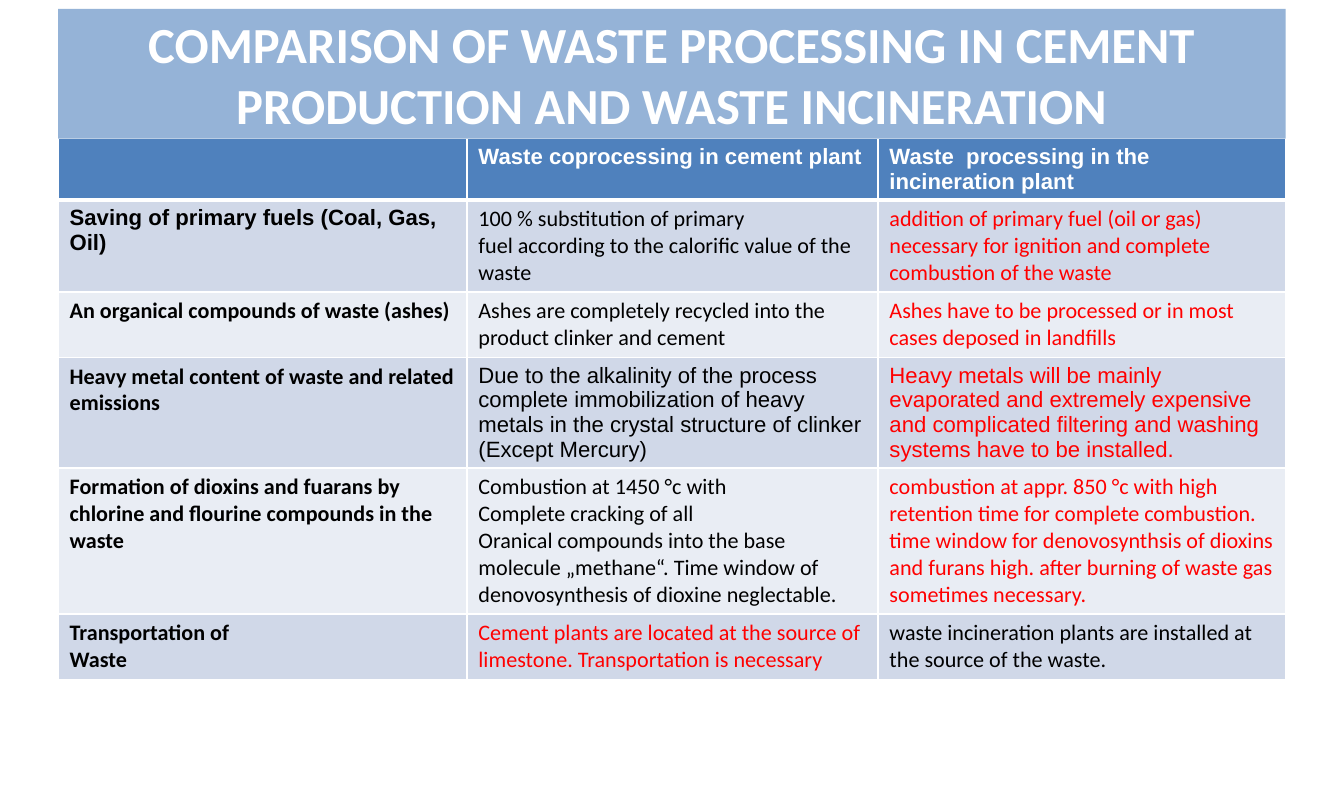
"""Build a slide comparing waste processing in cement and incineration plants."""
from dataclasses import dataclass

from lxml import etree
from pptx import Presentation
from pptx.dml.color import RGBColor
from pptx.enum.shapes import MSO_SHAPE
from pptx.enum.text import MSO_ANCHOR, PP_ALIGN
from pptx.oxml.ns import qn
from pptx.util import Emu, Pt

PX = 9000
RECT = MSO_SHAPE.RECTANGLE
MIDDLE = MSO_ANCHOR.MIDDLE
CENTER = PP_ALIGN.CENTER
COLORS = {
    "white": "FFFFFF", "black": "000000", "red": "FF0000",
    "title": "95B3D7", "header": "4F81BD", "dark": "D0D8E8", "light": "E9EDF4",
}
SLIDE_WIDTH, SLIDE_HEIGHT = 1200, 720
LEFT, TITLE_TOP, TABLE_TOP = 52, 8, 124
COL_WIDTHS = (365, 367, 364)
WIDTH = sum(COL_WIDTHS)
TITLE = "COMPARISON OF WASTE PROCESSING IN CEMENT PRODUCTION AND WASTE INCINERATION"


@dataclass(frozen=True)
class Entry:
    lines: tuple[str, ...] = ()
    color: str = "black"
    font: str = "Calibri"
    bold: bool = False
    size: int = 14


@dataclass(frozen=True)
class Row:
    height: int
    entries: tuple[Entry, Entry, Entry]


def header(*lines: str) -> Entry:
    return Entry(lines, "white", "Arial", True)


def topic(*lines: str, font: str = "Calibri") -> Entry:
    return Entry(lines, font=font, bold=True)


def plus(*lines: str, font: str = "Calibri") -> Entry:
    return Entry(lines, font=font)


def minus(*lines: str, font: str = "Calibri") -> Entry:
    return Entry(lines, "red", font)


ROWS = (
    Row(53, (
        header(),
        header("Waste coprocessing in cement plant"),
        header("Waste  processing in the incineration plant"),
    )),
    Row(82, (
        topic("Saving of primary fuels (Coal, Gas, Oil)", font="Arial"),
        plus("100 % substitution of primary",
             "fuel according to the calorific value of the waste"),
        minus("addition of primary fuel (oil or gas) necessary for ignition "
              "and complete combustion of the waste"),
    )),
    Row(58, (
        topic("An organical compounds of waste (ashes)"),
        plus("Ashes are completely recycled into the product clinker and cement"),
        minus("Ashes have to be processed or in most cases deposed in landfills"),
    )),
    Row(98, (
        topic("Heavy metal content of waste and related emissions"),
        plus("Due to the alkalinity of the process complete immobilization of heavy "
             "metals in the crystal structure of clinker (Except Mercury)", font="Arial"),
        minus("Heavy metals will be mainly evaporated and extremely expensive and "
              "complicated filtering and washing systems have to be installed.",
              font="Arial"),
    )),
    Row(130, (
        topic("Formation of dioxins and fuarans by chlorine and flourine "
              "compounds in the waste"),
        plus("Combustion at 1450 °c with",
             "Complete cracking of all",
             "Oranical compounds into the base molecule „methane“. Time window of "
             "denovosynthesis of dioxine neglectable."),
        minus("combustion at appr. 850 °c with high retention time for complete "
              "combustion. time window for denovosynthsis of dioxins and furans high. "
              "after burning of waste gas sometimes necessary."),
    )),
    Row(58, (
        topic("Transportation of", "Waste"),
        minus("Cement plants are located at the source of limestone. "
              "Transportation is necessary"),
        plus("waste incineration plants are installed at the source of the waste."),
    )),
)


def px(n: int) -> Emu:
    return Emu(n * PX)


def rgb(name: str) -> RGBColor:
    return RGBColor.from_string(COLORS[name])


def write(tf, entry: Entry, align: PP_ALIGN | None = None) -> None:
    for i, line in enumerate(entry.lines):
        p = tf.add_paragraph() if i else tf.paragraphs[0]
        p.alignment = align
        r = p.add_run()
        r.text = line
        r.font.name = entry.font
        r.font.size = Pt(entry.size)
        r.font.bold = entry.bold
        r.font.color.rgb = rgb(entry.color)


def set_borders(cell, top: int, bottom: int) -> None:
    tc_pr = cell._tc.get_or_add_tcPr()
    widths = {"lnL": 1, "lnR": 1, "lnT": top, "lnB": bottom}
    for i, (side, width) in enumerate(widths.items()):
        ln = etree.Element(qn(f"a:{side}"), w=str(Pt(width)))
        fill = etree.SubElement(ln, qn("a:solidFill"))
        etree.SubElement(fill, qn("a:srgbClr"), val=COLORS["white"])
        tc_pr.insert(i, ln)


def add_comparison(s) -> None:
    height = sum(row.height for row in ROWS)
    table = s.shapes.add_table(len(ROWS), len(COL_WIDTHS), px(LEFT), px(TABLE_TOP),
                               px(WIDTH), px(height)).table
    for column, width in zip(table.columns, COL_WIDTHS):
        column.width = px(width)
    for i, row in enumerate(ROWS):
        table.rows[i].height = px(row.height)
        fill = "header" if i == 0 else "dark" if i % 2 else "light"
        for j, entry in enumerate(row.entries):
            cell = table.cell(i, j)
            cell.fill.solid()
            cell.fill.fore_color.rgb = rgb(fill)
            set_borders(cell, 3 if i == 1 else 1, 3 if i == 0 else 1)
            write(cell.text_frame, entry)


def add_title(s) -> None:
    sp = s.shapes.add_shape(RECT, px(LEFT), px(TITLE_TOP), px(WIDTH),
                            px(TABLE_TOP - TITLE_TOP))
    sp.shadow.inherit = False
    sp.fill.solid()
    sp.fill.fore_color.rgb = rgb("title")
    sp.line.fill.background()
    tf = sp.text_frame
    tf.word_wrap = True
    tf.vertical_anchor = MIDDLE
    write(tf, Entry((TITLE,), "white", bold=True, size=32), CENTER)


def main() -> None:
    prs = Presentation()
    prs.slide_width, prs.slide_height = px(SLIDE_WIDTH), px(SLIDE_HEIGHT)
    s = prs.slides.add_slide(prs.slide_layouts[6])
    add_comparison(s)
    add_title(s)
    prs.save("out.pptx")


if __name__ == "__main__":
    main()
